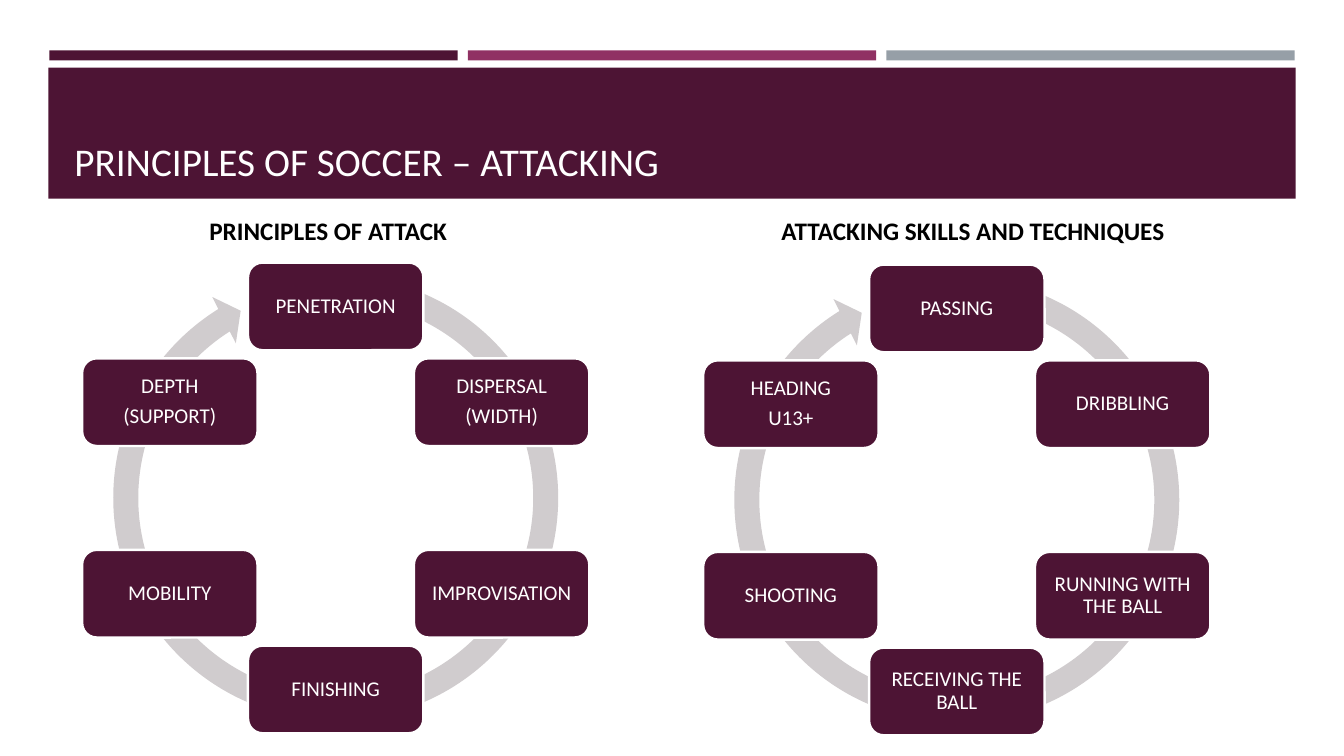
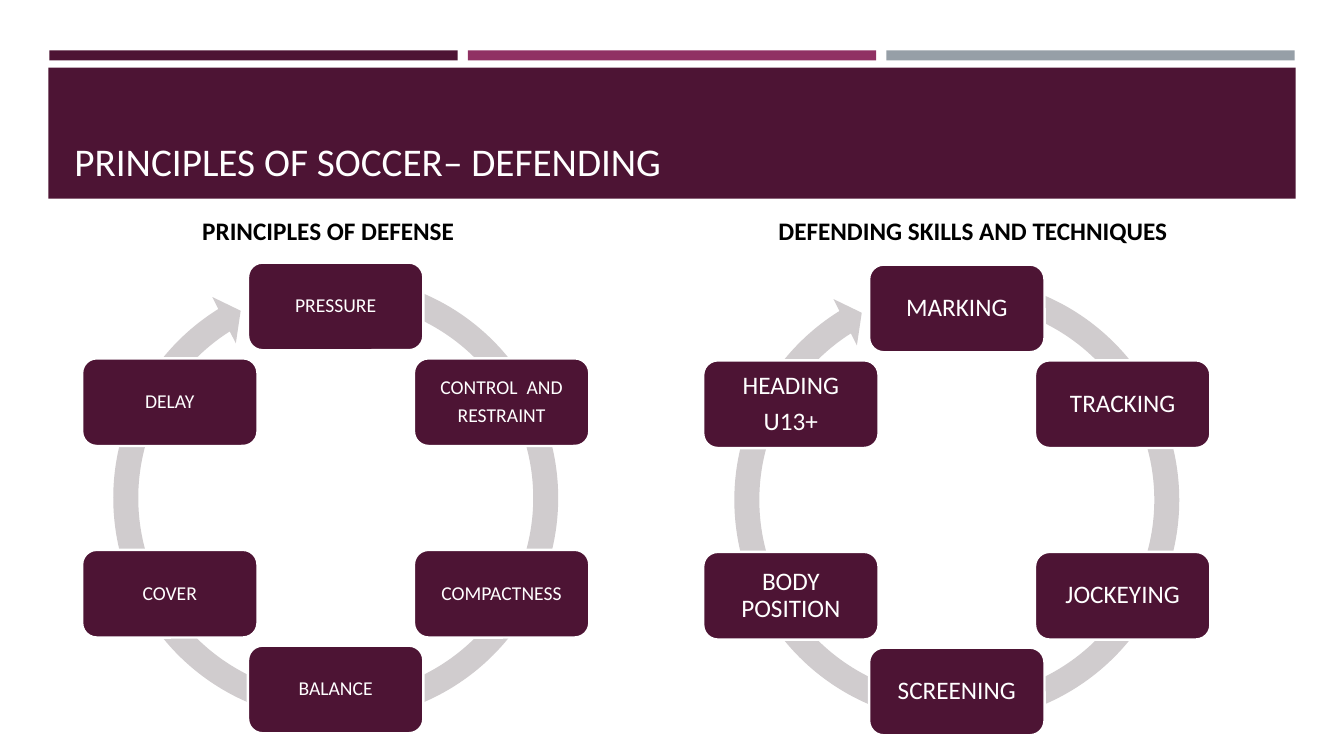
"""Build two slides on the principles of soccer, each with two cycles."""
from dataclasses import dataclass
from math import cos, radians, sin

from pptx import Presentation
from pptx.dml.color import RGBColor
from pptx.enum.shapes import MSO_SHAPE
from pptx.enum.text import MSO_ANCHOR, PP_ALIGN
from pptx.util import Emu, Pt

RECTANGLE = MSO_SHAPE.RECTANGLE
ROUNDED = MSO_SHAPE.ROUNDED_RECTANGLE
CIRCULAR_ARROW = MSO_SHAPE.CIRCULAR_ARROW
TOP, MIDDLE, BOTTOM = MSO_ANCHOR.TOP, MSO_ANCHOR.MIDDLE, MSO_ANCHOR.BOTTOM
LEFT, CENTER = PP_ALIGN.LEFT, PP_ALIGN.CENTER
EMU_PER_PX = 9144


@dataclass(frozen=True)
class Theme:
    """Colours, font and type sizes of the deck."""
    plum: str = "4D1434"
    magenta: str = "903163"
    steel: str = "969FA7"
    ring: str = "D0CCCE"
    white: str = "FFFFFF"
    black: str = "000000"
    font: str = "Calibri"
    title_size: int = 28
    heading_size: int = 18
    outline: float = 1.75


def px(length):
    """Turn px into EMU."""
    return Emu(round(length * EMU_PER_PX))


def apply(target, values):
    """Set each attribute named in values on target."""
    for name, value in values.items():
        setattr(target, name, value)


class SlideBuilder:
    """Hold the deck, its theme and the current slide."""

    def __init__(self, theme):
        """Start an empty widescreen deck."""
        self.theme = theme
        self.deck = Presentation()
        apply(self.deck, {"slide_width": px(1333), "slide_height": px(750)})
        self.page = None

    def add_page(self, title):
        """Add a slide with the colour bands and the title."""
        theme = self.theme
        self.page = self.deck.slides.add_slide(self.deck.slide_layouts[6])
        for index, color in enumerate((theme.plum, theme.magenta, theme.steel)):
            self.shape(RECTANGLE, (49 + 415 * index, 50, 405, 10), color)
        self.shape(RECTANGLE, (48, 67, 1237, 130), theme.plum)
        box = self.text_box((64, 77, 1206, 111))
        self.fill_text(box, [title], theme.title_size, theme.white, LEFT, BOTTOM)

    def shape(self, kind, bounds, fill, outline=None):
        """Add a flat preset shape."""
        shape = self.page.shapes.add_shape(kind, *map(px, bounds))
        shape.shadow.inherit = False
        shape.fill.solid()
        shape.fill.fore_color.rgb = RGBColor.from_string(fill)
        if outline:
            shape.line.color.rgb = RGBColor.from_string(outline)
            shape.line.width = Pt(self.theme.outline)
        else:
            shape.line.fill.background()
        return shape

    def text_box(self, bounds):
        """Add an empty text box."""
        return self.page.shapes.add_textbox(*map(px, bounds))

    def fill_text(self, box, lines, size, color, align, anchor, bold=False, spacing=None):
        """Fill a box with one paragraph for each line."""
        frame = box.text_frame
        apply(frame, {"word_wrap": True, "vertical_anchor": anchor})
        for index, line in enumerate(lines):
            para = frame.add_paragraph() if index else frame.paragraphs[0]
            apply(para, {"alignment": align, **(spacing or {})})
            span = para.add_run()
            span.text = line
            apply(span.font, {"name": self.theme.font, "size": Pt(size), "bold": bold})
            span.font.color.rgb = RGBColor.from_string(color)

    def heading(self, text, bounds):
        """Add a bold heading above a cycle."""
        theme = self.theme
        self.fill_text(self.text_box(bounds), [text], theme.heading_size, theme.black,
                       CENTER, TOP, bold=True)

    def cycle(self, center, steps, size):
        """Place the steps clockwise from the top on a circular arrow."""
        center_x, center_y = center
        ring_size, radius, width, height = 468, 190, 174, 87
        arrow = self.shape(CIRCULAR_ARROW, (center_x - ring_size / 2, center_y - ring_size / 2,
                                            ring_size, ring_size), self.theme.ring)
        degree = 0.6
        arrow_values = (5.3 / 100, 5.21 * degree, 237.87 * degree, 285.02 * degree, 5.5 / 100)
        for index, value in enumerate(arrow_values):
            arrow.adjustments[index] = value
        margin = px(10)
        for index, step in enumerate(steps):
            angle = radians(360 * index / len(steps))
            left = center_x + radius * sin(angle) - width / 2
            top = center_y - radius * cos(angle) - height / 2
            box = self.shape(ROUNDED, (left, top, width, height),
                             self.theme.plum, self.theme.white)
            apply(box.text_frame, {"margin_left": margin, "margin_right": margin,
                                   "margin_top": margin, "margin_bottom": margin})
            self.fill_text(box, step.split("\n"), size, self.theme.white, CENTER, MIDDLE,
                           spacing={"line_spacing": 0.9, "space_after": Pt(0.35 * size)})


HEADING_BOUNDS = ((52, 209, 547, 40), (630, 209, 670, 40))
CYCLE_CENTERS = ((333, 494), (949, 496))
PAGES = (
    ("PRINCIPLES OF SOCCER – ATTACKING", (
        ("PRINCIPLES OF ATTACK", 15,
         ("PENETRATION", "DISPERSAL\n(WIDTH)", "IMPROVISATION",
          "FINISHING", "MOBILITY", "DEPTH\n(SUPPORT)")),
        ("ATTACKING SKILLS AND TECHNIQUES", 15,
         ("PASSING", "DRIBBLING", "RUNNING WITH THE BALL",
          "RECEIVING THE BALL", "SHOOTING", "HEADING\nU13+")))),
    ("PRINCIPLES OF SOCCER– DEFENDING", (
        ("PRINCIPLES OF DEFENSE", 14,
         ("PRESSURE", "CONTROL  AND\nRESTRAINT", "COMPACTNESS",
          "BALANCE", "COVER", "DELAY")),
        ("DEFENDING SKILLS AND TECHNIQUES", 18,
         ("MARKING", "TRACKING", "JOCKEYING",
          "SCREENING", "BODY POSITION", "HEADING\nU13+")))),
)


def main():
    """Build and save the deck."""
    builder = SlideBuilder(Theme())
    for title, cycles in PAGES:
        builder.add_page(title)
        for bounds, center, (heading, size, steps) in zip(HEADING_BOUNDS, CYCLE_CENTERS, cycles):
            builder.heading(heading, bounds)
            builder.cycle(center, steps, size)
    builder.deck.save("out.pptx")


if __name__ == "__main__":
    main()
